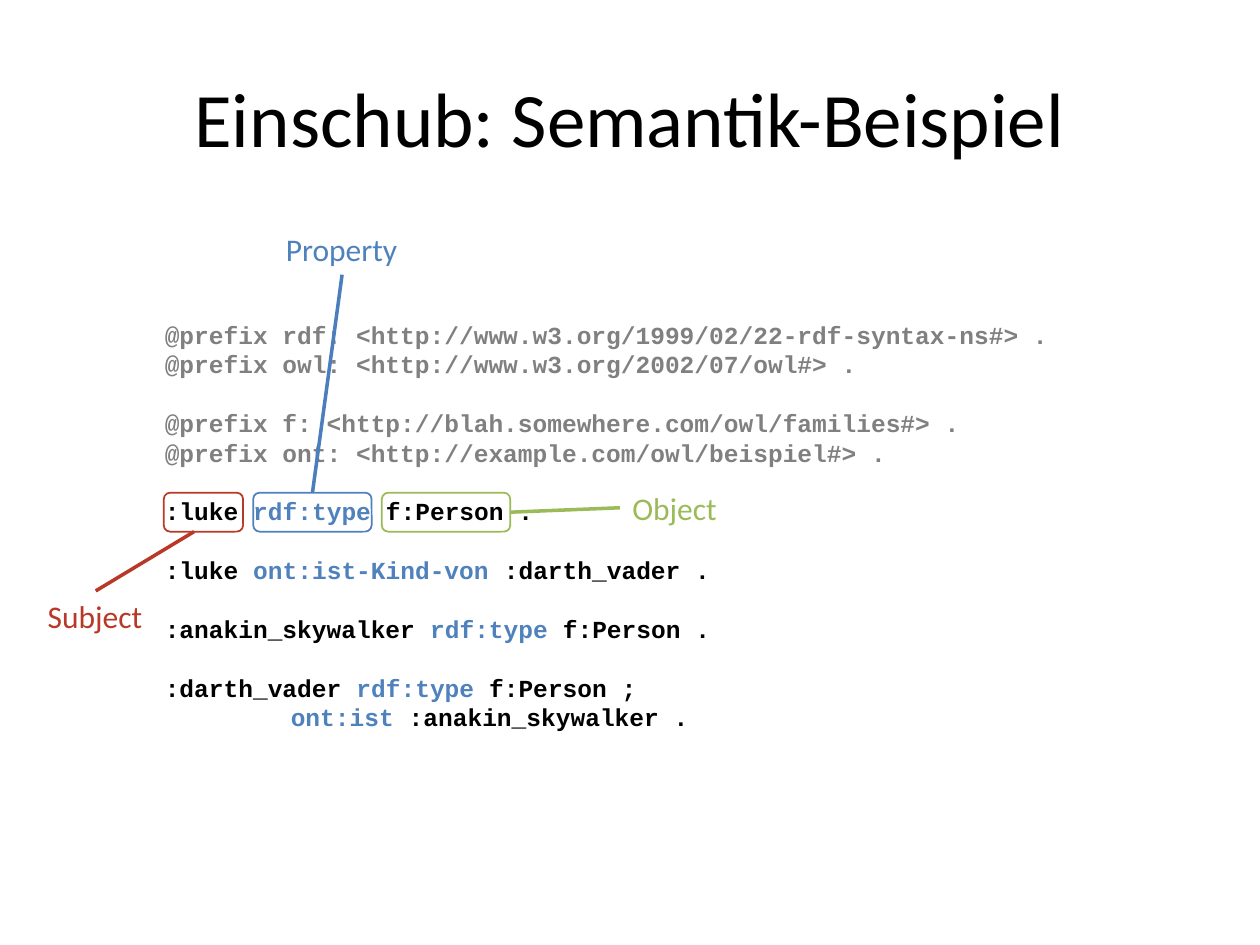
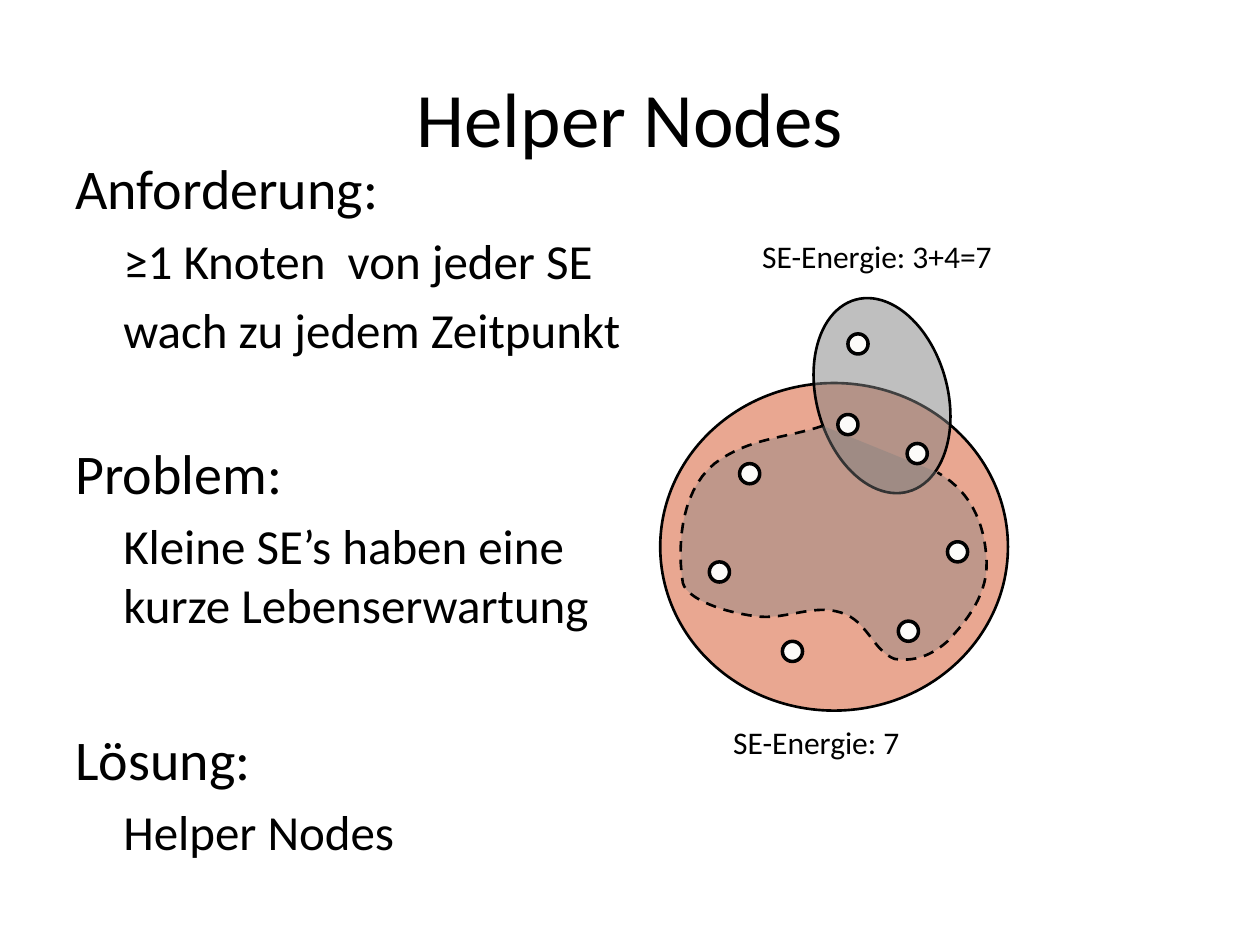
from dataclasses import dataclass

from lxml import etree
from pptx import Presentation
from pptx import util as u
from pptx.dml.color import RGBColor
from pptx.enum import dml, shapes, text
from pptx.oxml.ns import qn


@dataclass(frozen=True)
class Theme:
    black: str = "000000"
    white: str = "FFFFFF"
    grey: str = "808080"
    blue: str = "4F81BD"
    blue_line: str = "4B7EBC"
    green: str = "9BBB59"
    red: str = "B83927"
    orange: str = "D45024"
    node: str = "FCFBF9"
    font: str = "Calibri"
    mono: str = "Courier New"
    title_size: float = 44
    heading_size: float = 32
    body_size: float = 28
    label_size: float = 18
    code_size: float = 14
    code_leading: float = 16.8


T = Theme()

# Each code line: blank line before it, left indent, (text, colour) runs
CODE = [
    (False, 0, [("@prefix rdf: <http://www.w3.org/1999/02/22-rdf-syntax-ns#> .", T.grey)]),
    (False, 0, [("@prefix owl: <http://www.w3.org/2002/07/owl#> .", T.grey)]),
    (True, 0, [("@prefix f: <http://blah.somewhere.com/owl/families#> .", T.grey)]),
    (False, 0, [("@prefix ont: <http://example.com/owl/beispiel#> .", T.grey)]),
    (True, 0, [(":luke ", T.black), ("rdf:type", T.blue), (" f:Person .", T.black)]),
    (True, 0, [(":luke ", T.black), ("ont:ist-Kind-von", T.blue), (" :darth_vader .", T.black)]),
    (True, 0, [(":anakin_skywalker ", T.black), ("rdf:type", T.blue), (" f:Person .", T.black)]),
    (True, 0, [(":darth_vader ", T.black), ("rdf:type", T.blue), (" f:Person ;", T.black)]),
    (False, 1, [("ont:ist", T.blue), (" :anakin_skywalker .", T.black)]),
]

# Each section: space before its heading in points, heading, lines below it
SECTIONS = [
    (0, "Anforderung:", ["≥1 Knoten  von jeder SE", "wach zu jedem Zeitpunkt"]),
    (46, "Problem:", ["Kleine SE’s haben eine kurze Lebenserwartung"]),
    (52, "Lösung:", ["Helper Nodes"]),
]

NODE_SIZE = 0.16
NODES = [(7.2, 3.52), (6.73, 2.65), (6.65, 3.29), (7.13, 4.93), (5.87, 3.68),
         (7.52, 4.3), (5.63, 4.46), (6.21, 5.09)]

REGION_START = (6.53, 3.38)
REGION_CURVES = [
    ((6.24, 3.48), (5.95, 3.47), (5.67, 3.68)),
    ((5.38, 3.92), (5.38, 4.39), (5.42, 4.63)),
    ((5.46, 4.76), (5.75, 4.86), (5.99, 4.89)),
    ((6.24, 4.93), (6.48, 4.77), (6.72, 4.88)),
    ((6.89, 4.96), (6.94, 5.17), (7.1, 5.23)),
    ((7.29, 5.26), (7.43, 5.17), (7.52, 5.09)),
    ((7.61, 4.99), (7.84, 4.76), (7.83, 4.46)),
    ((7.82, 4.21), (7.74, 3.92), (7.44, 3.75)),
]


def rgb(value):
    return RGBColor.from_string(value)


def inches(values):
    return [u.Inches(v) for v in values]


def add_run(p, content, size, color=T.black, font=T.font, bold=False):
    r = p.add_run()
    r.text = content
    r.font.size = u.Pt(size)
    r.font.name = font
    r.font.bold = bold
    r.font.color.rgb = rgb(color)


def indent(p, left):
    p._p.get_or_add_pPr().set("marL", str(u.Inches(left)))


def next_paragraph(tf, index):
    return tf.add_paragraph() if index else tf.paragraphs[0]


def style(sp, line, width, fill=None, opacity=100):
    sp.shadow.inherit = False
    sp.line.color.rgb = rgb(line)
    sp.line.width = u.Pt(width)
    if fill is None:
        sp.fill.background()
        return
    sp.fill.solid()
    sp.fill.fore_color.rgb = rgb(fill)
    if opacity < 100:
        clr = sp.fill._xPr.find(qn("a:solidFill"))[0]
        etree.SubElement(clr, qn("a:alpha")).set("val", str(opacity * 1000))


def add_outline(slide, kind, box, line, width, fill=None, opacity=100):
    sp = slide.shapes.add_shape(kind, *inches(box))
    style(sp, line, width, fill, opacity)
    return sp


def add_title(slide, content):
    tf = slide.shapes.add_textbox(*inches((0.5, 0.3, 9, 1.25))).text_frame
    tf.word_wrap = True
    tf.vertical_anchor = text.MSO_ANCHOR.MIDDLE
    p = tf.paragraphs[0]
    p.alignment = text.PP_ALIGN.CENTER
    add_run(p, content, T.title_size)


def add_label(slide, content, box, color=T.black):
    sp = slide.shapes.add_textbox(*inches(box))
    tf = sp.text_frame
    tf.word_wrap = False
    tf.auto_size = text.MSO_AUTO_SIZE.SHAPE_TO_FIT_TEXT
    add_run(tf.paragraphs[0], content, T.label_size, color)
    return sp


def add_pointer(slide, label, label_side, end, color, box=None, box_side=0):
    """Line from a label to a point, joined to box where one is given."""
    line = slide.shapes.add_connector(shapes.MSO_CONNECTOR.STRAIGHT, 0, 0, *inches(end))
    line.begin_connect(label, label_side)
    if box is not None:
        line.end_connect(box, box_side)
    line.line.color.rgb = rgb(color)
    line.line.width = u.Pt(2)
    etree.SubElement(line._element.spPr, qn("a:effectLst"))


def add_code(slide):
    sp = add_outline(slide, shapes.MSO_SHAPE.RECTANGLE, (1.21, 2.49, 7.33, 3.64),
                     T.white, 0.75)
    tf = sp.text_frame
    tf.word_wrap = True
    tf.vertical_anchor = text.MSO_ANCHOR.TOP
    for i, (gap, left, runs) in enumerate(CODE):
        p = next_paragraph(tf, i)
        p.alignment = text.PP_ALIGN.LEFT
        p.line_spacing = u.Pt(T.code_leading)
        p.space_before = u.Pt(T.code_leading if gap else 0)
        indent(p, left)
        for content, color in runs:
            add_run(p, content, T.code_size, color, T.mono, bold=True)


def add_sections(slide):
    tf = slide.shapes.add_textbox(*inches((0.5, 1.17, 4.58, 5.33))).text_frame
    tf.word_wrap = True
    for i, (gap, heading, lines) in enumerate(SECTIONS):
        p = next_paragraph(tf, i)
        p.space_before = u.Pt(gap)
        add_run(p, heading, T.heading_size)
        for content in lines:
            p = tf.add_paragraph()
            p.space_before = u.Pt(0.2 * T.body_size)
            indent(p, 0.38)
            add_run(p, content, T.body_size)


def curve_points(start, curves, steps=16):
    """Points along a chain of cubic Bézier curves."""
    for c1, c2, end in curves:
        for t in (k / steps for k in range(1, steps + 1)):
            s = 1 - t
            yield tuple(s**3 * a + 3 * s * s * t * b + 3 * s * t * t * c + t**3 * d
                        for a, b, c, d in zip(start, c1, c2, end))
        start = end


def add_region(slide):
    builder = slide.shapes.build_freeform(*inches(REGION_START))
    points = curve_points(REGION_START, REGION_CURVES)
    builder.add_line_segments([inches(pt) for pt in points], close=False)
    sp = builder.convert_to_shape()
    style(sp, T.black, 1.5, T.grey, 40)
    sp.line.dash_style = dml.MSO_LINE.DASH


def build_semantics(slide):
    add_title(slide, "Einschub: Semantik-Beispiel")
    property_box, object_box, _ = [
        add_outline(slide, shapes.MSO_SHAPE.ROUNDED_RECTANGLE, (x, 3.91, w, 0.31), color, 1)
        for x, w, color in ((2.01, 0.94, T.blue), (3.03, 1.02, T.green), (1.3, 0.63, T.red))]
    add_code(slide)
    subject_label = add_label(slide, "Subject", (0.28, 4.69, 0.96, 0.4), T.red)
    property_label = add_label(slide, "Property", (2.17, 1.78, 1.09, 0.4), T.blue)
    object_label = add_label(slide, "Object", (4.92, 3.83, 0.88, 0.4), T.green)
    add_pointer(slide, subject_label, 0, (1.54, 4.22), T.red)
    add_pointer(slide, property_label, 2, (2.48, 3.91), T.blue_line, property_box, 0)
    add_pointer(slide, object_label, 1, (4.05, 4.06), T.green, object_box, 3)


def build_helper_nodes(slide):
    oval = shapes.MSO_SHAPE.OVAL
    add_title(slide, "Helper Nodes")
    add_sections(slide)
    add_outline(slide, oval, (5.24, 3.04, 2.76, 2.6), T.black, 1.5, T.orange, 50)
    small_set = add_outline(slide, oval, (6.48, 2.35, 1.04, 1.58), T.black, 1.5, T.grey, 50)
    small_set.rotation = 344.7
    add_region(slide)
    for x, y in NODES:
        add_outline(slide, oval, (x, y, NODE_SIZE, NODE_SIZE), T.black, 2, T.node)
    add_label(slide, "SE-Energie: 3+4=7", (5.95, 1.83, 2.05, 0.4))
    add_label(slide, "SE-Energie: 7", (5.72, 5.69, 1.54, 0.4))


def main():
    prs = Presentation()
    prs.slide_width, prs.slide_height = inches((10, 7.5))
    for build in (build_semantics, build_helper_nodes):
        build(prs.slides.add_slide(prs.slide_layouts[6]))
    prs.save("out.pptx")


if __name__ == "__main__":
    main()
